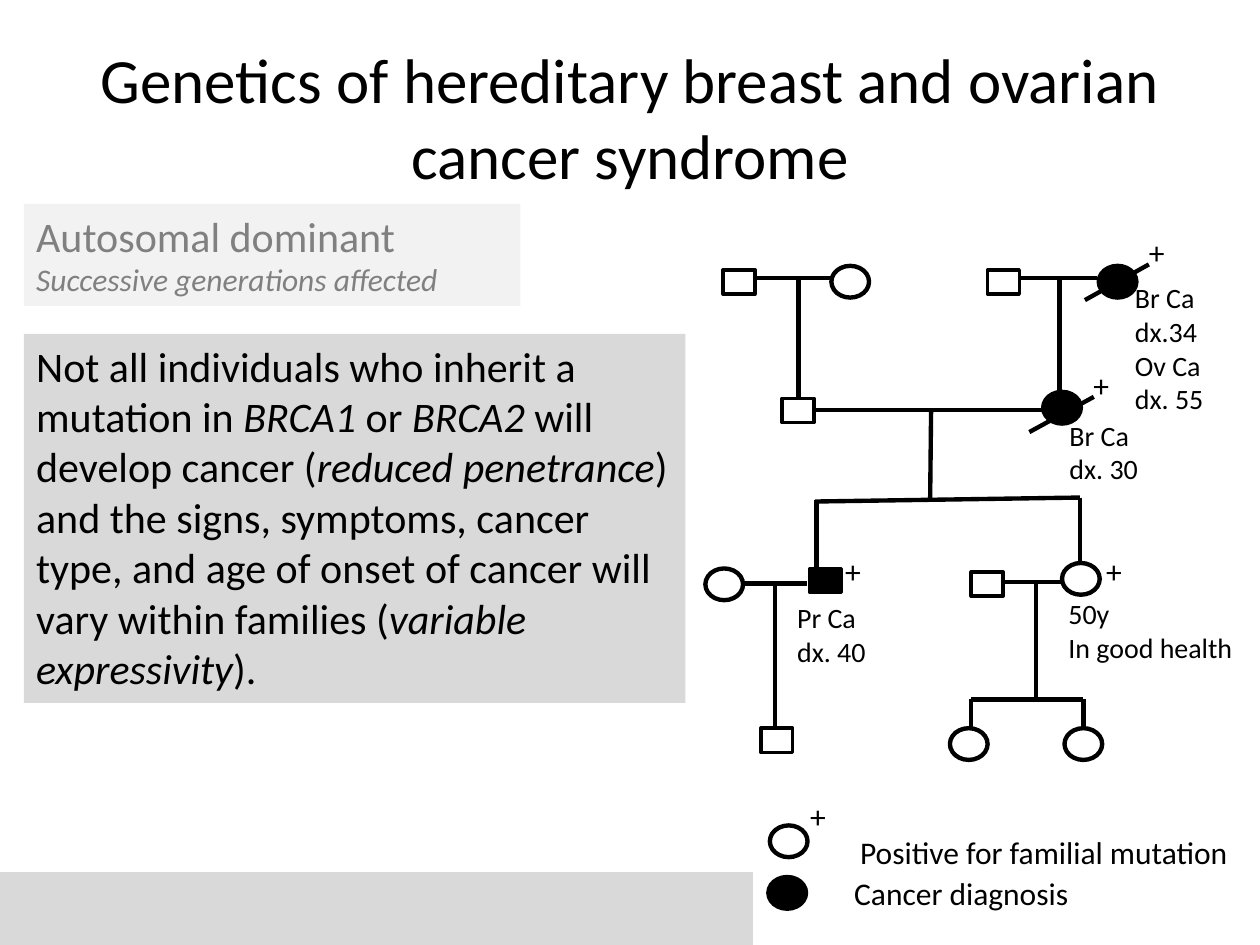
import pptx
import pptx.dml.color
import pptx.enum.shapes
import pptx.enum.text
import pptx.oxml.ns
import pptx.util
from lxml import etree
from pptx.util import Cm

SHAPE = pptx.enum.shapes.MSO_SHAPE
ANCHOR = pptx.enum.text.MSO_ANCHOR
ALIGN = pptx.enum.text.PP_ALIGN

BLACK, WHITE, BAND_GREY = "000000", "FFFFFF", "D9D9D9"
PALE_GREY, TEXT_GREY = "F2F2F2", "808080"

SQUARE = dict(kind=SHAPE.RECTANGLE, width=0.64, height=0.49, line_width=2)
CIRCLE = dict(kind=SHAPE.OVAL, width=0.76, height=0.64, line_width=2.5)

MATING_LINES = [
    (15.21, 5.61, 16.76, 5.61), (20.57, 5.61, 22.12, 5.61),
    (16.43, 8.26, 21.03, 8.26), (14.96, 11.76, 16.26, 11.76),
    (20.22, 11.73, 21.51, 11.73),
]
DESCENT_LINES = [
    (16.1, 5.61, 16.1, 8), (21.36, 5.61, 21.36, 7.98),
    (18.77, 8.26, 18.75, 10.11), (16.43, 10.11, 21.77, 10.03),
    (16.46, 10.08, 16.46, 11.46), (21.77, 10.03, 21.77, 11.4),
    (15.62, 11.76, 15.62, 14.68), (20.88, 11.73, 20.88, 14.1),
    (19.58, 14.1, 21.84, 14.1), (19.58, 14.1, 19.58, 14.71),
    (21.84, 14.1, 21.84, 14.71),
]
DECEASED_LINES = [(23.16, 5.33, 21.87, 6.05), (22.05, 8, 20.75, 8.71)]

PEOPLE = [
    (SQUARE, 14.58, 5.44, WHITE), (CIRCLE, 16.76, 5.36, WHITE),
    (SQUARE, 19.91, 5.44, WHITE), (CIRCLE, 22.15, 5.36, BLACK),
    (SQUARE, 15.77, 8.03, WHITE), (CIRCLE, 21.03, 7.9, BLACK),
    (CIRCLE, 14.22, 11.46, WHITE), (SQUARE, 16.33, 11.46, BLACK),
    (SQUARE, 19.58, 11.53, WHITE), (CIRCLE, 21.41, 11.35, WHITE),
    (SQUARE, 15.34, 14.68, WHITE), (CIRCLE, 19.15, 14.68, WHITE),
    (CIRCLE, 21.46, 14.68, WHITE),
]
LEGEND_SYMBOLS = [(CIRCLE, 15.52, 16.64, WHITE), (CIRCLE, 15.49, 17.68, BLACK)]

MUTATION_MARKS = [(22.91, 4.57), (21.79, 7.26), (16.79, 11), (22.05, 11), (16.08, 15.95)]
DIAGNOSES = [
    ((22.63, 5.54, 2.87, 3), ["Br Ca dx.34", "Ov Ca", "dx. 55"]),
    ((21.31, 8.31, 2.87, 1.63), ["Br Ca", "dx. 30"]),
    ((15.82, 11.99, 2.87, 1.63), ["Pr Ca", "dx. 40"]),
    ((21.29, 11.91, 5, 1.63), ["50y", "In good health"]),
]
LEGEND_LABELS = [
    ((17.09, 16.66, 8, 1.02), "Positive for familial mutation"),
    ((16.97, 17.5, 8, 1.02), "Cancer diagnosis"),
]
PENETRANCE = (
    "Not all individuals who inherit a mutation in *BRCA1 *or* BRCA2* will develop "
    "cancer (*reduced penetrance*) and the signs, symptoms, cancer type, and age of "
    "onset of cancer will vary within families (*variable expressivity*)."
)


def color(value):
    """Turn a hex string into a colour."""
    return pptx.dml.color.RGBColor.from_string(value)


def apply(target, values):
    """Set each attribute named in a dict."""
    for name, value in values.items():
        setattr(target, name, value)


def write(frame, texts, sizes, text_color=BLACK, align=ALIGN.LEFT, anchor=ANCHOR.TOP):
    """Write one paragraph per text, with italics between asterisks."""
    apply(frame, dict(word_wrap=True, vertical_anchor=anchor,
                      auto_size=pptx.enum.text.MSO_AUTO_SIZE.NONE))
    for index, (text, size) in enumerate(zip(texts, sizes)):
        paragraph = frame.add_paragraph() if index else frame.paragraphs[0]
        paragraph.alignment = align
        for order, piece in enumerate(text.split("*")):
            if not piece:
                continue
            run = paragraph.add_run()
            run.text = piece
            apply(run.font, dict(name="Calibri", size=pptx.util.Pt(size), italic=order % 2 == 1))
            run.font.color.rgb = color(text_color)


def add_title(slide, box, text):
    """Place and format the title placeholder."""
    title = slide.shapes.title
    apply(title, dict(zip(("left", "top", "width", "height"), map(Cm, box))))
    write(title.text_frame, [text], [36], align=ALIGN.CENTER, anchor=ANCHOR.MIDDLE)


def add_panel(slide, box, fill, kind=SHAPE.RECTANGLE, line=None, line_width=2):
    """Add a filled shape, outlined if a line colour is given."""
    shape = slide.shapes.add_shape(kind, *map(Cm, box))
    shape.shadow.inherit = False
    shape.fill.solid()
    shape.fill.fore_color.rgb = color(fill)
    if line:
        shape.line.color.rgb = color(line)
        shape.line.width = pptx.util.Pt(line_width)
    else:
        shape.line.fill.background()
    return shape


def add_symbol(slide, symbol, left, top, fill):
    """Add one pedigree square or circle."""
    add_panel(slide, (left, top, symbol["width"], symbol["height"]), fill,
              symbol["kind"], BLACK, symbol["line_width"])


def add_line(slide, ends):
    """Add a straight pedigree line."""
    connector = slide.shapes.add_connector(
        pptx.enum.shapes.MSO_CONNECTOR.STRAIGHT, *map(Cm, ends))
    connector.line.color.rgb = color(BLACK)
    connector.line.width = pptx.util.Pt(2.5)
    etree.SubElement(connector._element.spPr, pptx.oxml.ns.qn("a:effectLst"))


def add_label(slide, box, texts, size):
    """Add a text box with lines of one size."""
    label = slide.shapes.add_textbox(*map(Cm, box))
    write(label.text_frame, texts, [size] * len(texts))


def add_pedigree(slide):
    """Draw the family tree with its diagnoses."""
    for ends in MATING_LINES + DESCENT_LINES + DECEASED_LINES:
        add_line(slide, ends)
    for person in PEOPLE:
        add_symbol(slide, *person)
    for box, texts in DIAGNOSES:
        add_label(slide, box, texts, 16)


def add_legend(slide):
    """Draw the legend on its white panel."""
    add_panel(slide, (15.21, 15.72, 10.19, 3.33), WHITE, line=WHITE)
    for symbol in LEGEND_SYMBOLS:
        add_symbol(slide, *symbol)
    for box, text in LEGEND_LABELS:
        add_label(slide, box, [text], 18)


def main():
    """Build and save the slide."""
    presentation = pptx.Presentation()
    apply(presentation, dict(slide_width=Cm(25.4), slide_height=Cm(19.05)))
    slide = presentation.slides.add_slide(presentation.slide_layouts[5])
    add_panel(slide, (0, 17.58, 15.24, 1.47), BAND_GREY)
    add_title(slide, (1.27, 0.76, 22.86, 3.18),
              "Genetics of hereditary breast and ovarian cancer syndrome")
    inheritance = add_panel(slide, (0.48, 4.11, 10.01, 2.06), PALE_GREY)
    write(inheritance.text_frame,
          ["Autosomal dominant", "*Successive generations affected*"], [24, 18], TEXT_GREY)
    penetrance = add_panel(slide, (0.48, 6.73, 13.34, 7.44), BAND_GREY)
    write(penetrance.text_frame, [PENETRANCE], [24])
    add_pedigree(slide)
    add_legend(slide)
    for left, top in MUTATION_MARKS:
        add_label(slide, (left, top, 1.12, 1.02), ["+"], 18)
    presentation.save("out.pptx")


if __name__ == "__main__":
    main()
